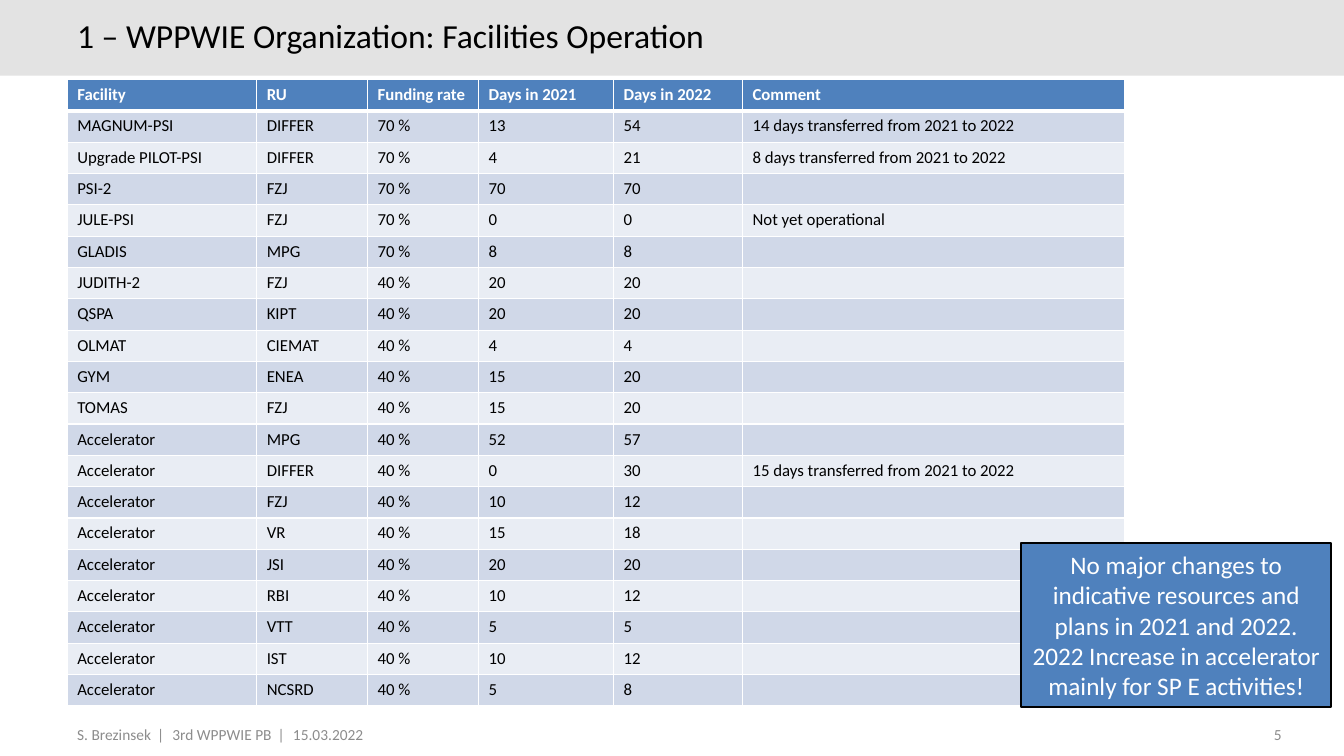
from typing import NamedTuple

from lxml.etree import SubElement as Sub
from pptx import Presentation
from pptx.dml.color import RGBColor
from pptx.enum.shapes import MSO_SHAPE as Kind
from pptx.enum.text import MSO_ANCHOR as Anchor, PP_ALIGN as Align
from pptx.oxml.ns import qn
from pptx.util import Inches, Pt

WHITE = RGBColor(0xFF, 0xFF, 0xFF)
BLACK = RGBColor(0, 0, 0)
GREY = RGBColor(0x8C, 0x8C, 0x8C)
BAND = RGBColor(0xE3, 0xE3, 0xE3)
BLUE = RGBColor(0x4F, 0x81, 0xBD)
ODD = RGBColor(0xD0, 0xD8, 0xE8)
EVEN = RGBColor(0xE9, 0xED, 0xF4)
FONT = "Calibri"


class Box(NamedTuple):
    """Left, top, width and height in percent of the slide."""
    x: float
    y: float
    w: float
    h: float


class Style(NamedTuple):
    size: int
    color: RGBColor
    bold: bool = False


class Site(NamedTuple):
    name: str
    unit: str
    rate: int
    first: int
    second: int
    note: str = ""


HEADS = ("Facility", "RU", "Funding rate", "Days in 2021", "Days in 2022", "Comment")
WIDTHS = (14.1, 8.25, 8.25, 10.05, 9.6, 28.4)
ACC = "Accelerator"
SITES = (
    Site("MAGNUM-PSI", "DIFFER", 70, 13, 54, "14 days transferred from 2021 to 2022"),
    Site("Upgrade PILOT-PSI", "DIFFER", 70, 4, 21, "8 days transferred from 2021 to 2022"),
    Site("PSI-2", "FZJ", 70, 70, 70),
    Site("JULE-PSI", "FZJ", 70, 0, 0, "Not yet operational"),
    Site("GLADIS", "MPG", 70, 8, 8),
    Site("JUDITH-2", "FZJ", 40, 20, 20),
    Site("QSPA", "KIPT", 40, 20, 20),
    Site("OLMAT", "CIEMAT", 40, 4, 4),
    Site("GYM", "ENEA", 40, 15, 20),
    Site("TOMAS", "FZJ", 40, 15, 20),
    Site(ACC, "MPG", 40, 52, 57),
    Site(ACC, "DIFFER", 40, 0, 30, "15 days transferred from 2021 to 2022"),
    Site(ACC, "FZJ", 40, 10, 12),
    Site(ACC, "VR", 40, 15, 18),
    Site(ACC, "JSI", 40, 20, 20),
    Site(ACC, "RBI", 40, 10, 12),
    Site(ACC, "VTT", 40, 5, 5),
    Site(ACC, "IST", 40, 10, 12),
    Site(ACC, "NCSRD", 40, 5, 8),
)

deck = Presentation()
deck.slide_width, deck.slide_height = Inches(13.33), Inches(7.5)
slide = deck.slides.add_slide(deck.slide_layouts[6])


def across(share: float) -> int:
    return round(deck.slide_width * share / 100)


def down(share: float) -> int:
    return round(deck.slide_height * share / 100)


def place(box: Box) -> tuple[int, int, int, int]:
    return across(box.x), down(box.y), across(box.w), down(box.h)


def add_run(para, text: str, style: Style):
    run = para.add_run()
    run.text = text
    font = run.font
    font.name, font.size, font.bold = FONT, Pt(style.size), style.bold
    font.color.rgb = style.color
    return run


def add_text(box: Box, anchor=Anchor.TOP, align=Align.LEFT):
    frame = slide.shapes.add_textbox(*place(box)).text_frame
    frame.word_wrap, frame.vertical_anchor = True, anchor
    para = frame.paragraphs[0]
    para.alignment = align
    return para


def add_rect(box: Box, fill: RGBColor):
    rect = slide.shapes.add_shape(Kind.RECTANGLE, *place(box))
    rect.shadow.inherit = False
    rect.fill.solid()
    rect.fill.fore_color.rgb = fill
    rect.line.fill.background()
    return rect


def add_edges(cell, top: int, bottom: int) -> None:
    props = cell._tc.get_or_add_tcPr()
    for side, width in (("L", 1), ("R", 1), ("T", top), ("B", bottom)):
        edge = Sub(props, qn(f"a:ln{side}"), w=str(Pt(width)))
        Sub(Sub(edge, qn("a:solidFill")), qn("a:srgbClr"), val=str(WHITE))


def fill_cell(cell, text: str, row: int) -> None:
    add_edges(cell, 3 if row == 1 else 1, 3 if row == 0 else 1)
    cell.fill.solid()
    cell.fill.fore_color.rgb = BLUE if row == 0 else ODD if row % 2 else EVEN
    para = cell.text_frame.paragraphs[0]
    if text:
        add_run(para, text, Style(12, BLACK if row else WHITE, row == 0))
    else:  # keeps an empty cell as low as its row
        Sub(para._p, qn("a:endParaRPr"), sz="1200")


# Title band
add_rect(Box(0, 0, 100, 10), BAND)
title = add_text(Box(5, 1.73, 82.5, 6.67), Anchor.MIDDLE)
title.line_spacing = Pt(24)
add_run(title, "1 – WPPWIE Organization: Facilities Operation", Style(24, BLACK))

# Footer and page number
small = Style(11, GREY)
page = add_text(Box(90.17, 95.2, 5.93, 2.93), align=Align.RIGHT)
add_run(page, "5", small)
footer = add_text(Box(5, 95.2, 28.5, 4.8))
for i, part in enumerate(("S. Brezinsek", "3rd WPPWIE PB", "15.03.2022")):
    if i:  # wider letter spacing around each bar
        add_run(footer, " | ", small)._r.get_or_add_rPr().set("spc", "166")
    add_run(footer, part, small)

# Facilities table
rows = [HEADS] + [(s.name, s.unit, f"{s.rate} %", str(s.first), str(s.second), s.note)
                  for s in SITES]
area = Box(5, 10.53, sum(WIDTHS), 82.93)
table = slide.shapes.add_table(len(rows), len(HEADS), *place(area)).table
for col, width in zip(table.columns, WIDTHS):
    col.width = across(width)
for r, texts in enumerate(rows):
    table.rows[r].height = down(area.h / len(rows))
    for c, text in enumerate(texts):
        fill_cell(table.cell(r, c), text, r)

# Callout
note = add_rect(Box(76, 71.87, 23.05, 21.6), BLUE)
note.line.color.rgb, note.line.width = BLACK, Pt(1.5)
note.text_frame.word_wrap = True
note.text_frame.vertical_anchor = Anchor.MIDDLE
para = note.text_frame.paragraphs[0]
para.alignment = Align.CENTER
add_run(para, "No major changes to indicative resources and plans in 2021 and 2022. "
        "2022 Increase in accelerator mainly for SP E activities!", Style(18, WHITE))

deck.save("out.pptx")
